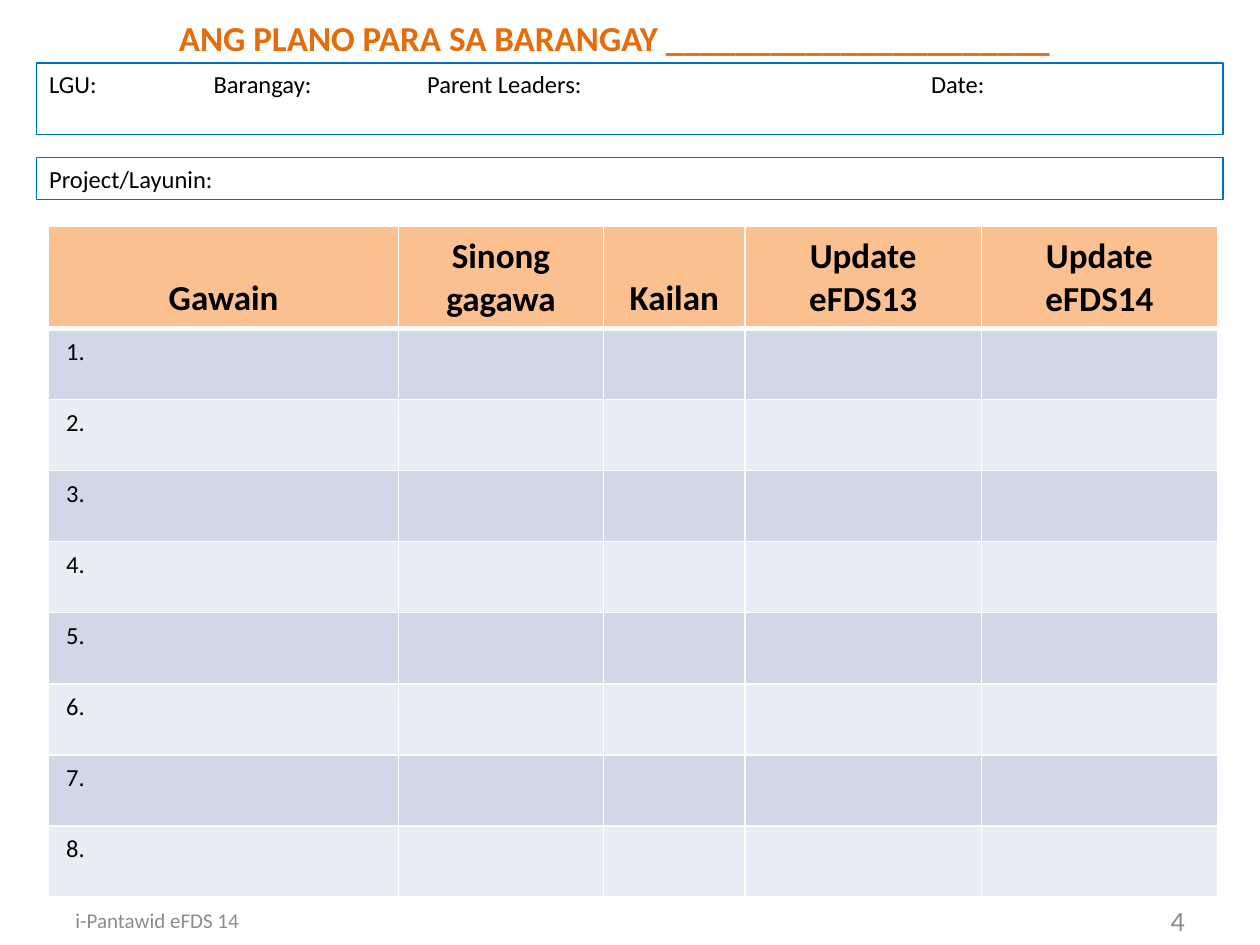
"""Build the barangay action plan slide: title, details boxes, task table and footer."""

from dataclasses import dataclass

from lxml.etree import SubElement
from pptx import Presentation
from pptx.dml.color import RGBColor
from pptx.enum.shapes import MSO_SHAPE
from pptx.enum.text import MSO_ANCHOR, MSO_AUTO_SIZE, PP_ALIGN
from pptx.oxml import parse_xml
from pptx.oxml.ns import nsdecls, qn
from pptx.slide import Slide
from pptx.table import _Cell
from pptx.text.text import TextFrame
from pptx.util import Pt


@dataclass(frozen=True)
class Theme:
    """Colours, font and type sizes of the slide."""

    font: str = "Calibri"
    accent: str = "E46C0A"
    ink: str = "000000"
    muted: str = "8C8C8C"
    outline: str = "0070C0"
    rule: str = "FFFFFF"
    header: str = "FAC090"
    bands: tuple[str, str] = ("D0D8E8", "E9EDF4")
    heading: float = 20
    number: float = 16
    body: float = 14
    footer: float = 12


@dataclass(frozen=True)
class Box:
    """A rectangle in points."""

    left: float
    top: float
    width: float
    height: float

    def lengths(self) -> tuple[Pt, Pt, Pt, Pt]:
        """Return the position and size as lengths."""
        return Pt(self.left), Pt(self.top), Pt(self.width), Pt(self.height)


@dataclass(frozen=True)
class Field:
    """An outlined form line with its labels at tab stops."""

    box: Box
    labels: tuple[str, ...]
    stops: tuple[float, ...] = ()


@dataclass(frozen=True)
class Note:
    """A footer text."""

    box: Box
    text: str
    size: float
    align: PP_ALIGN


@dataclass(frozen=True)
class Column:
    """A table column."""

    heading: str
    width: float


THEME = Theme()
TITLE = "ANG PLANO PARA SA BARANGAY ______________________"
TITLE_BOX = Box(95, 5.8, 517, 31.5)
FIELDS = (
    Field(Box(21, 36, 678, 41), ("LGU:", "Barangay:", "Parent Leaders:", "Date:"), (94, 216, 504)),
    Field(Box(21, 90, 678, 24.2), ("Project/Layunin:",)),
)
NOTES = (
    Note(Box(36, 511.5, 168, 28.75), "i-Pantawid eFDS 14", THEME.footer, PP_ALIGN.LEFT),
    Note(Box(516, 511.5, 168, 28.75), "4", THEME.number, PP_ALIGN.RIGHT),
)
COLUMNS = (
    Column("Gawain", 200),
    Column("Sinong gagawa", 117),
    Column("Kailan", 81),
    Column("Update eFDS13", 135),
    Column("Update eFDS14", 135),
)
TASK_COUNT = 8
HEADER_HEIGHT = 58.3
TASK_HEIGHT = 40.6
TABLE_BOX = Box(
    27.8, 129.5, sum(column.width for column in COLUMNS), HEADER_HEIGHT + TASK_COUNT * TASK_HEIGHT
)


def write(
    frame: TextFrame,
    text: str,
    size: float,
    color: str,
    align: PP_ALIGN = PP_ALIGN.LEFT,
    bold: bool = False,
) -> None:
    """Write one formatted paragraph."""
    paragraph = frame.paragraphs[0]
    paragraph.text = text
    paragraph.alignment = align
    paragraph.font.name = THEME.font
    paragraph.font.size = Pt(size)
    paragraph.font.bold = bold
    paragraph.font.color.rgb = RGBColor.from_string(color)


def add_title(slide: Slide) -> None:
    """Place the title in its placeholder."""
    title = slide.shapes.title
    title.left, title.top, title.width, title.height = TITLE_BOX.lengths()
    frame = title.text_frame
    frame.auto_size = MSO_AUTO_SIZE.SHAPE_TO_FIT_TEXT
    frame.word_wrap = False
    frame.vertical_anchor = MSO_ANCHOR.TOP
    write(frame, TITLE, THEME.heading, THEME.accent, bold=True)


def add_field(slide: Slide, field: Field) -> None:
    """Draw an outlined form line."""
    outline = slide.shapes.add_shape(MSO_SHAPE.RECTANGLE, *field.box.lengths())
    outline.shadow.inherit = False
    outline.fill.background()
    outline.line.color.rgb = RGBColor.from_string(THEME.outline)
    outline.line.width = Pt(0.75)
    frame = outline.text_frame
    frame.word_wrap = True
    frame.vertical_anchor = MSO_ANCHOR.TOP
    write(frame, "\t".join(field.labels), THEME.body, THEME.ink)
    if field.stops:
        tabs = parse_xml(f"<a:tabLst {nsdecls('a')}/>")
        for stop in field.stops:
            SubElement(tabs, qn("a:tab"), pos=str(Pt(stop)), algn="l")
        frame.paragraphs[0]._p.get_or_add_pPr().insert(0, tabs)


def add_note(slide: Slide, note: Note) -> None:
    """Add a footer text."""
    frame = slide.shapes.add_textbox(*note.box.lengths()).text_frame
    frame.word_wrap = True
    frame.vertical_anchor = MSO_ANCHOR.MIDDLE
    write(frame, note.text, note.size, THEME.muted, note.align)


def style_cell(cell: _Cell, fill: str, top: float = 1, bottom: float = 1) -> None:
    """Set the borders, fill and margins of a cell."""
    properties = cell._tc.get_or_add_tcPr()
    for side, width in (("L", 1), ("R", 1), ("T", top), ("B", bottom)):
        border = SubElement(properties, qn(f"a:ln{side}"), w=str(Pt(width)))
        SubElement(SubElement(border, qn("a:solidFill")), qn("a:srgbClr"), val=THEME.rule)
    cell.fill.solid()
    cell.fill.fore_color.rgb = RGBColor.from_string(fill)
    cell.margin_left = cell.margin_right = Pt(10)
    cell.margin_top = cell.margin_bottom = Pt(5)


def add_plan(slide: Slide) -> None:
    """Add the table of numbered tasks."""
    plan = slide.shapes.add_table(TASK_COUNT + 1, len(COLUMNS), *TABLE_BOX.lengths()).table
    plan.rows[0].height = Pt(HEADER_HEIGHT)
    for index, column in enumerate(COLUMNS):
        plan.columns[index].width = Pt(column.width)
        heading = plan.cell(0, index)
        style_cell(heading, THEME.header, bottom=3)
        heading.vertical_anchor = MSO_ANCHOR.BOTTOM
        write(
            heading.text_frame, column.heading, THEME.heading, THEME.ink, PP_ALIGN.CENTER, bold=True
        )
    for task in range(1, TASK_COUNT + 1):
        plan.rows[task].height = Pt(TASK_HEIGHT)
        for cell in plan.rows[task].cells:
            style_cell(cell, THEME.bands[(task - 1) % 2], top=3 if task == 1 else 1)
        write(plan.cell(task, 0).text_frame, f"{task}.", THEME.body, THEME.ink)


def main() -> None:
    """Build and save the slide."""
    presentation = Presentation()
    presentation.slide_width, presentation.slide_height = Pt(720), Pt(540)
    slide = presentation.slides.add_slide(presentation.slide_layouts[5])
    add_title(slide)
    for field in FIELDS:
        add_field(slide, field)
    for note in NOTES:
        add_note(slide, note)
    add_plan(slide)
    presentation.save("out.pptx")


if __name__ == "__main__":
    main()
